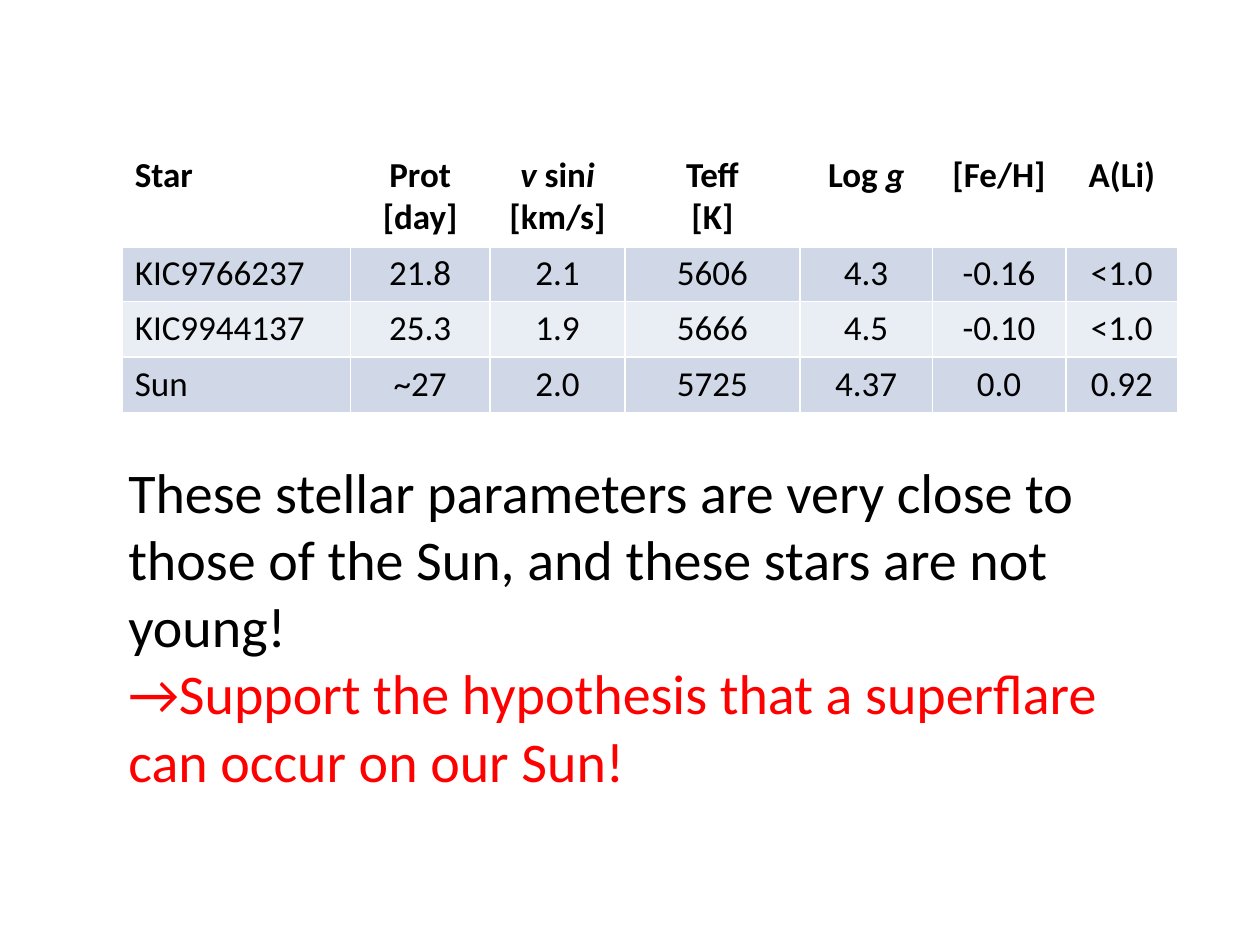
from lxml.etree import SubElement
from pptx import Presentation
from pptx.dml.color import RGBColor
from pptx.enum.text import MSO_AUTO_SIZE as AutoSize, PP_ALIGN as Align
from pptx.oxml.ns import qn
from pptx.util import Inches, Pt

COLORS = {
    "text": "000000",
    "accent": "FF0000",
    "white": "FFFFFF",
    "band_dark": "D0D8E8",
    "band_light": "E9EDF4",
}

# Each header cell is a list of paragraphs; each paragraph a list of (text, italic).
HEADER = [
    [[("Star", False)]],
    [[("Prot", False)], [("[day]", False)]],
    [[("v ", True), ("sin", False), ("i", True), (" [km/s]", False)]],
    [[("Teff", False)], [("[K]", False)]],
    [[("Log ", False), ("g", True)]],
    [[("[Fe/H]", False)]],
    [[("A(Li)", False)]],
]
STARS = [
    ["KIC9766237", "21.8", "2.1", "5606", "4.3", "-0.16", "<1.0"],
    ["KIC9944137", "25.3", "1.9", "5666", "4.5", "-0.10", "<1.0"],
    ["Sun", "~27", "2.0", "5725", "4.37", "0.0", "0.92"],
]
COLUMN_WIDTHS = [1.81, 1.11, 1.07, 1.39, 1.05, 1.06, 0.89]
ROW_HEIGHTS = [0.78, 0.44, 0.44, 0.44]
CONCLUSIONS = [
    ("These stellar parameters are very close to those of the Sun, "
     "and these stars are not young!", "text"),
    ("→Support the hypothesis that a superflare can occur on our Sun!", "accent"),
]


class SlideBuilder:
    font = "Calibri"
    table_size = 20
    body_size = 32

    def __init__(self, page):
        self.page = page

    def add_span(self, para, text, size, color="text", bold=False, italic=False):
        span = para.add_run()
        span.text = text
        span.font.name = self.font
        span.font.size = Pt(size)
        span.font.bold = bold
        span.font.italic = italic
        span.font.color.rgb = RGBColor.from_string(COLORS[color])

    def next_para(self, frame, index):
        """Return the frame's own first paragraph, then new ones."""
        return frame.add_paragraph() if index else frame.paragraphs[0]

    def set_borders(self, cell, bottom):
        properties = cell._tc.get_or_add_tcPr()
        widths = {"a:lnL": 1, "a:lnR": 1, "a:lnT": 1, "a:lnB": bottom}
        for position, (tag, width) in enumerate(widths.items()):
            line = SubElement(properties, qn(tag), w=str(Pt(width)))
            fill = SubElement(line, qn("a:solidFill"))
            SubElement(fill, qn("a:srgbClr"), val=COLORS["white"])
            properties.insert(position, line)  # borders go before the fill

    def fill_cell(self, cell, paragraphs, fill, align, header):
        cell.fill.solid()
        cell.fill.fore_color.rgb = RGBColor.from_string(COLORS[fill])
        self.set_borders(cell, bottom=3 if header else 1)
        for index, spans in enumerate(paragraphs):
            para = self.next_para(cell.text_frame, index)
            para.alignment = align
            for text, italic in spans:
                self.add_span(para, text, self.table_size, bold=header, italic=italic)

    def add_table(self, left, top, rows, widths, heights):
        frame = self.page.shapes.add_table(
            len(rows), len(widths), Inches(left), Inches(top),
            Inches(sum(widths)), Inches(sum(heights)))
        table = frame.table
        for column, width in zip(table.columns, widths):
            column.width = Inches(width)
        for row, height in zip(table.rows, heights):
            row.height = Inches(height)
        for r, row in enumerate(rows):
            band = "band_dark" if r % 2 else "band_light"
            for c, paragraphs in enumerate(row):
                self.fill_cell(table.cell(r, c), paragraphs,
                               fill=band if r else "white",
                               align=Align.CENTER if c else Align.LEFT,
                               header=r == 0)

    def add_text(self, left, top, width, height, lines):
        box = self.page.shapes.add_textbox(
            Inches(left), Inches(top), Inches(width), Inches(height))
        frame = box.text_frame
        frame.word_wrap = True
        frame.auto_size = AutoSize.SHAPE_TO_FIT_TEXT
        for index, (text, color) in enumerate(lines):
            self.add_span(self.next_para(frame, index), text, self.body_size, color)


def main():
    deck = Presentation()
    deck.slide_width, deck.slide_height = Inches(10), Inches(7.5)
    builder = SlideBuilder(deck.slides.add_slide(deck.slide_layouts[6]))
    star_rows = [[[[(value, False)]] for value in star] for star in STARS]
    builder.add_table(0.97, 1.17, [HEADER] + star_rows, COLUMN_WIDTHS, ROW_HEIGHTS)
    builder.add_text(0.92, 3.58, 8.13, 2.79, CONCLUSIONS)
    deck.save("out.pptx")


if __name__ == "__main__":
    main()
